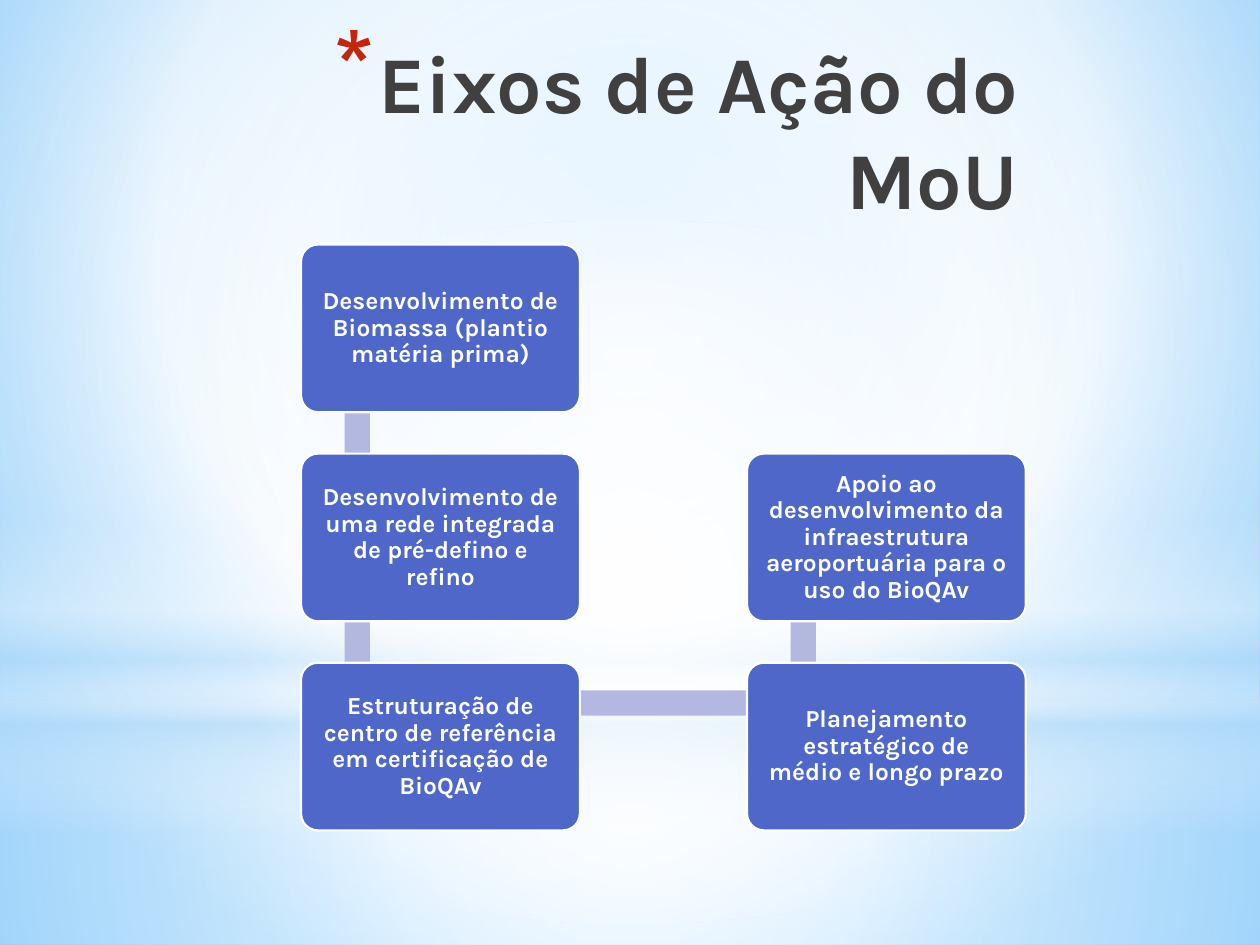
from pptx import Presentation
from pptx.dml.color import RGBColor as RGB
from pptx.enum.shapes import MSO_SHAPE as Shp
from pptx.enum.text import MSO_ANCHOR as Anc, MSO_AUTO_SIZE as Auto, PP_ALIGN as Al
from pptx.oxml import parse_xml
from pptx.oxml.ns import nsdecls, qn
from pptx.util import Cm, Pt

FONT = "Karla"
WHITE = RGB(0xFF, 0xFF, 0xFF)
DARK = RGB(0x40, 0x40, 0x40)
RED = RGB(0xC3, 0x26, 0x0C)
BLUE = RGB(0x4E, 0x67, 0xC8)
LILAC = RGB(0xB2, 0xB8, 0xE0)
SKY = RGB(0xB4, 0xDC, 0xFA)
PALE = RGB(0x9E, 0xD5, 0xFF)
DEEP = RGB(0x5B, 0xB9, 0xFF)

WIDE, HIGH = 25.4, 19.05
MID = (50, 50, 50, 50)

# Nodes in chain order: column, row, text
STEPS = [
    (0, 0, "Desenvolvimento de Biomassa (plantio matéria prima)"),
    (0, 1, "Desenvolvimento de uma rede integrada de pré-defino e refino"),
    (0, 2, "Estruturação de centro de referência em certificação de BioQAv"),
    (1, 2, "Planejamento estratégico de médio e longo prazo"),
    (1, 1, "Apoio ao desenvolvimento da infraestrutura aeroportuária "
           "para o uso do BioQAv"),
]


def blend(fill, host, stops, focus=None):
    """Fill with (position, colour, opacity) stops, radial when focus is given."""
    fill.gradient()
    marks = "".join(
        f'<a:gs pos="{pos * 1000}"><a:srgbClr val="{color}">'
        f'<a:alpha val="{alpha * 1000}"/></a:srgbClr></a:gs>'
        for pos, color, alpha in stops)
    if focus:
        sides = " ".join(f'{s}="{v * 1000}"' for s, v in zip("ltrb", focus))
        course = f'<a:path path="circle"><a:fillToRect {sides}/></a:path>'
    else:
        course = '<a:lin ang="5400000" scaled="0"/>'
    old = host.find(".//" + qn("a:gradFill"))
    old.getparent().replace(old, parse_xml(
        f'<a:gradFill {nsdecls("a")} rotWithShape="1">'
        f'<a:gsLst>{marks}</a:gsLst>{course}</a:gradFill>'))


def block(slide, kind, box, color=None):
    shape = slide.shapes.add_shape(kind, *map(Cm, box))
    shape.shadow.inherit = False
    shape.line.fill.background()
    if color is not None:
        shape.fill.solid()
        shape.fill.fore_color.rgb = color
    return shape


def write(shape, text, size, color, align, anchor, inset, lines=None):
    frame = shape.text_frame
    frame.word_wrap = True
    frame.auto_size = Auto.NONE
    frame.vertical_anchor = anchor
    frame.margin_left = frame.margin_right = Cm(inset)
    frame.margin_top = frame.margin_bottom = Cm(inset / 2)
    para = frame.paragraphs[0]
    para.alignment = align
    if lines:
        para.line_spacing = lines
    run = para.add_run()
    run.text = text
    font = run.font
    font.name, font.size, font.bold = FONT, Pt(size), True
    font.color.rgb = color
    return para


def backdrop(slide):
    blend(slide.background.fill, slide.element,
          [(0, PALE, 100), (60, WHITE, 100), (100, DEEP, 100)], (20, 10, 20, 60))
    split = 14.17
    layers = [
        # Floor and wall
        (Shp.RECTANGLE, (0, split, WIDE, HIGH - split),
         [(0, WHITE, 91), (37, WHITE, 76), (100, SKY, 79)], MID),
        (Shp.RECTANGLE, (0, 0, WIDE, split),
         [(0, WHITE, 89), (48, WHITE, 62), (100, SKY, 79)], MID),
        # Horizon band
        (Shp.RECTANGLE, (0, 10.46, WIDE, 6.35),
         [(0, WHITE, 0), (29, WHITE, 30), (45, SKY, 40), (55, WHITE, 26),
          (65, SKY, 60), (100, WHITE, 0)], None),
        # Central glow
        (Shp.OVAL, (0, 4.45, WIDE, split),
         [(0, WHITE, 100), (56, WHITE, 0)], MID),
    ]
    for kind, box, stops, focus in layers:
        layer = block(slide, kind, box)
        blend(layer.fill, layer.element, stops, focus)


def heading(slide, box):
    title = slide.shapes.title
    title.left, title.top, title.width, title.height = map(Cm, box)
    # Bring the title in front of the backdrop
    title.element.getparent().append(title.element)
    para = write(title, "Eixos de Ação do MoU", 46, DARK, Al.RIGHT, Anc.TOP, 0.25)
    # Red asterisk bullet
    props = para.runs[0].font._element.getparent().getparent().get_or_add_pPr()
    props.set("marL", str(Cm(0.89)))
    props.set("indent", str(Cm(-0.89)))
    for item in (f'buClr {nsdecls("a")}><a:srgbClr val="{RED}"/></a:buClr>',
                 f'buSzPct {nsdecls("a")} val="128000"/>',
                 f'buChar {nsdecls("a")} char="*"/>'):
        props.append(parse_xml("<a:" + item))


def chain(slide, box):
    left, top, width, height = box
    wide, high, thick = 5.62, 3.38, 0.51
    across, down = width - wide, (height - high) / 2
    spots = [(left + col * across, top + row * down) for col, row, _ in STEPS]

    # Bars between neighbours, behind the nodes
    for (x1, y1), (x2, y2) in zip(spots, spots[1:]):
        if x1 == x2:
            bar = (x1 + 0.88, min(y1, y2) + 0.84, thick, down)
        else:
            bar = (x1 + 1.13, y1 + 0.56, across, thick)
        block(slide, Shp.RECTANGLE, bar, LILAC)

    # Nodes
    for (x, y), (_, _, text) in zip(spots, STEPS):
        node = block(slide, Shp.ROUNDED_RECTANGLE, (x, y, wide, high), BLUE)
        node.adjustments[0] = 0.1
        node.line.color.rgb = WHITE
        node.line.width = Pt(1.25)
        write(node, text, 14, WHITE, Al.CENTER, Anc.MIDDLE, 0.25, lines=0.9)


def main():
    deck = Presentation()
    deck.slide_width, deck.slide_height = Cm(WIDE), Cm(HIGH)
    slide = deck.slides.add_slide(deck.slide_layouts[5])
    backdrop(slide)
    heading(slide, (2.69, 0.53, 18.08, 3.18))
    chain(slide, (6.07, 4.93, 14.61, 11.81))
    deck.save("out.pptx")


if __name__ == "__main__":
    main()
